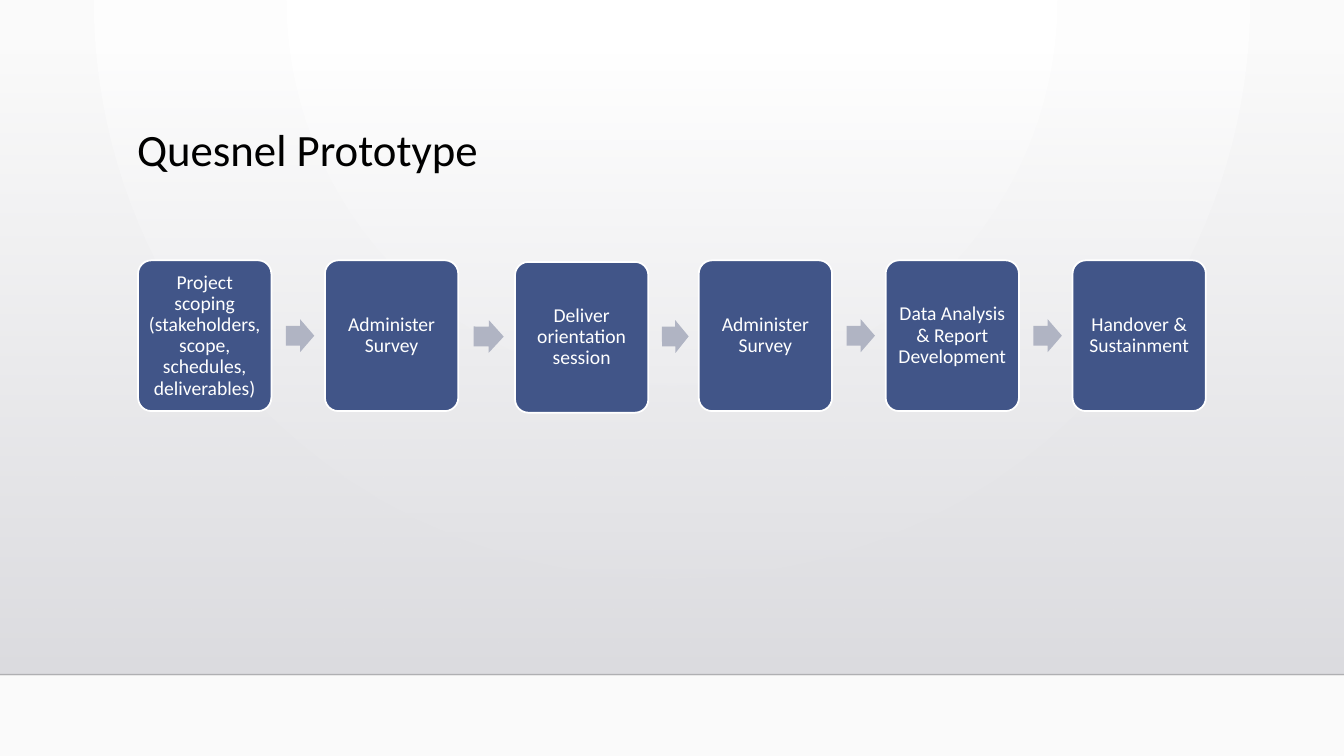
import math

import pptx
import pptx.dml.color
import pptx.enum.shapes
import pptx.enum.text
import pptx.oxml
import pptx.oxml.ns
import pptx.util

Cm = pptx.util.Cm
Pt = pptx.util.Pt
RGBColor = pptx.dml.color.RGBColor
MSO_SHAPE = pptx.enum.shapes.MSO_SHAPE
qn = pptx.oxml.ns.qn

# Content: step text, shift right and shift down from the regular row (cm)
TITLE = "Quesnel Prototype"
STEPS = [
    ("Project scoping (stakeholders, scope, schedules, deliverables)", 0, 0),
    ("Administer Survey", 0, 0),
    ("Deliver orientation session", 0.08, 0.04),
    ("Administer Survey", 0, 0),
    ("Data Analysis & Report Development", 0, 0),
    ("Handover & Sustainment", 0, 0),
]

FONT = "Calibri"
BLACK = RGBColor(0x00, 0x00, 0x00)
WHITE = RGBColor(0xFF, 0xFF, 0xFF)
STEP_BLUE = RGBColor(0x41, 0x55, 0x88)
ARROW_GREY = RGBColor(0xB0, 0xB4, 0xC3)

# Layout in cm
SLIDE_W, SLIDE_H = 33.87, 19.05
PANEL_TOP, PANEL_BOTTOM = 1.3, 17
ROW_LEFT, ROW_TOP, PITCH = 3.48, 6.56, 4.71
STEP_W, STEP_H = 3.36, 3.8
ARROW_H = 0.83
ARROW_START, ARROW_SHARE = 0.27, 0.53  # parts of the gap between steps

BACKDROP_STOPS = [(25, "FFFFFF", 100), (100, "FAFAFA", 100)]
BACKDROP_PATH = ('<a:path path="circle"><a:fillToRect l="43000" t="0" '
                 'r="43000" b="100000"/></a:path>')
PANEL_STOPS = [(0, "DCDCE0", 0), (100, "DEDEE2", 100)]
PANEL_PATH = '<a:lin ang="5400000" scaled="0"/>'


def set_gradient(fill, parent, stops, direction):
    """Replace the solid fill inside parent with a gradient."""
    fill.solid()
    gs = "".join(
        f'<a:gs pos="{pos * 1000}"><a:srgbClr val="{color}">'
        f'<a:alpha val="{alpha * 1000}"/></a:srgbClr></a:gs>'
        for pos, color, alpha in stops)
    grad = pptx.oxml.parse_xml(
        f'<a:gradFill {pptx.oxml.ns.nsdecls("a")} rotWithShape="1">'
        f'<a:gsLst>{gs}</a:gsLst>{direction}</a:gradFill>')
    solid = parent.find(".//" + qn("a:solidFill"))
    solid.getparent().replace(solid, grad)


def add_shape(slide, kind, left, top, width, height, color=None):
    sp = slide.shapes.add_shape(kind, Cm(left), Cm(top), Cm(width), Cm(height))
    sp.shadow.inherit = False
    sp.line.fill.background()
    if color is not None:
        sp.fill.solid()
        sp.fill.fore_color.rgb = color
    return sp


def set_text(tf, text, size, color, align, anchor):
    tf.text = text
    tf.word_wrap = True
    tf.auto_size = pptx.enum.text.MSO_AUTO_SIZE.NONE
    tf.vertical_anchor = anchor
    p = tf.paragraphs[0]
    p.alignment = align
    p.line_spacing = 0.9
    r = p.runs[0]
    r.font.name = FONT
    r.font.size = Pt(size)
    r.font.color.rgb = color


def main():
    prs = pptx.Presentation()
    prs.slide_width, prs.slide_height = Cm(SLIDE_W), Cm(SLIDE_H)
    slide = prs.slides.add_slide(prs.slide_layouts[5])
    align = pptx.enum.text.PP_ALIGN
    anchor = pptx.enum.text.MSO_ANCHOR

    # Background and fading panel
    set_gradient(slide.background.fill, slide.element.cSld,
                 BACKDROP_STOPS, BACKDROP_PATH)
    panel = add_shape(slide, MSO_SHAPE.RECTANGLE, 0, PANEL_TOP,
                      SLIDE_W, PANEL_BOTTOM - PANEL_TOP)
    set_gradient(panel.fill, panel.element.spPr, PANEL_STOPS, PANEL_PATH)

    # Translucent floor line
    floor = slide.shapes.add_connector(
        pptx.enum.shapes.MSO_CONNECTOR.STRAIGHT,
        Cm(0), Cm(PANEL_BOTTOM), Cm(SLIDE_W), Cm(PANEL_BOTTOM))
    floor.line.width = Pt(1)
    floor.line.color.rgb = BLACK
    spPr = floor.element.spPr
    color = spPr.find(".//" + qn("a:srgbClr"))
    color.append(pptx.oxml.parse_xml(
        f'<a:alpha {pptx.oxml.ns.nsdecls("a")} val="20000"/>'))
    spPr.append(pptx.oxml.parse_xml(
        f'<a:effectLst {pptx.oxml.ns.nsdecls("a")}/>'))

    # Title, brought in front of the panel
    title = slide.shapes.title
    title.left, title.top = Cm(3.2), Cm(3.1)
    title.width, title.height = Cm(26.67), Cm(2.92)
    set_text(title.text_frame, TITLE, 32, BLACK, align.LEFT, anchor.TOP)
    slide.shapes.element.append(title.element)

    # Steps, each joined to the one before by an arrow
    places = [(ROW_LEFT + i * PITCH + dx, ROW_TOP + dy)
              for i, (_, dx, dy) in enumerate(STEPS)]
    for i, ((text, _, _), (left, top)) in enumerate(zip(STEPS, places)):
        if i:
            last_left, last_top = places[i - 1]
            gap = left - last_left - STEP_W
            middle = (top + last_top + STEP_H) / 2
            arrow = add_shape(slide, MSO_SHAPE.RIGHT_ARROW,
                              last_left + STEP_W + ARROW_START * gap,
                              middle - ARROW_H / 2,
                              ARROW_SHARE * gap, ARROW_H, ARROW_GREY)
            arrow.adjustments[0], arrow.adjustments[1] = 0.6, 0.5
            arrow.rotation = math.degrees(
                math.atan2(top - last_top, left - last_left))
        step = add_shape(slide, MSO_SHAPE.ROUNDED_RECTANGLE,
                         left, top, STEP_W, STEP_H, STEP_BLUE)
        step.adjustments[0] = 0.1
        step.line.color.rgb = WHITE
        step.line.width = Pt(1.25)
        tf = step.text_frame
        tf.margin_left = tf.margin_right = Cm(0.15)
        tf.margin_top = tf.margin_bottom = Cm(0.15)
        set_text(tf, text, 14, WHITE, align.CENTER, anchor.MIDDLE)

    prs.save("out.pptx")


if __name__ == "__main__":
    main()
